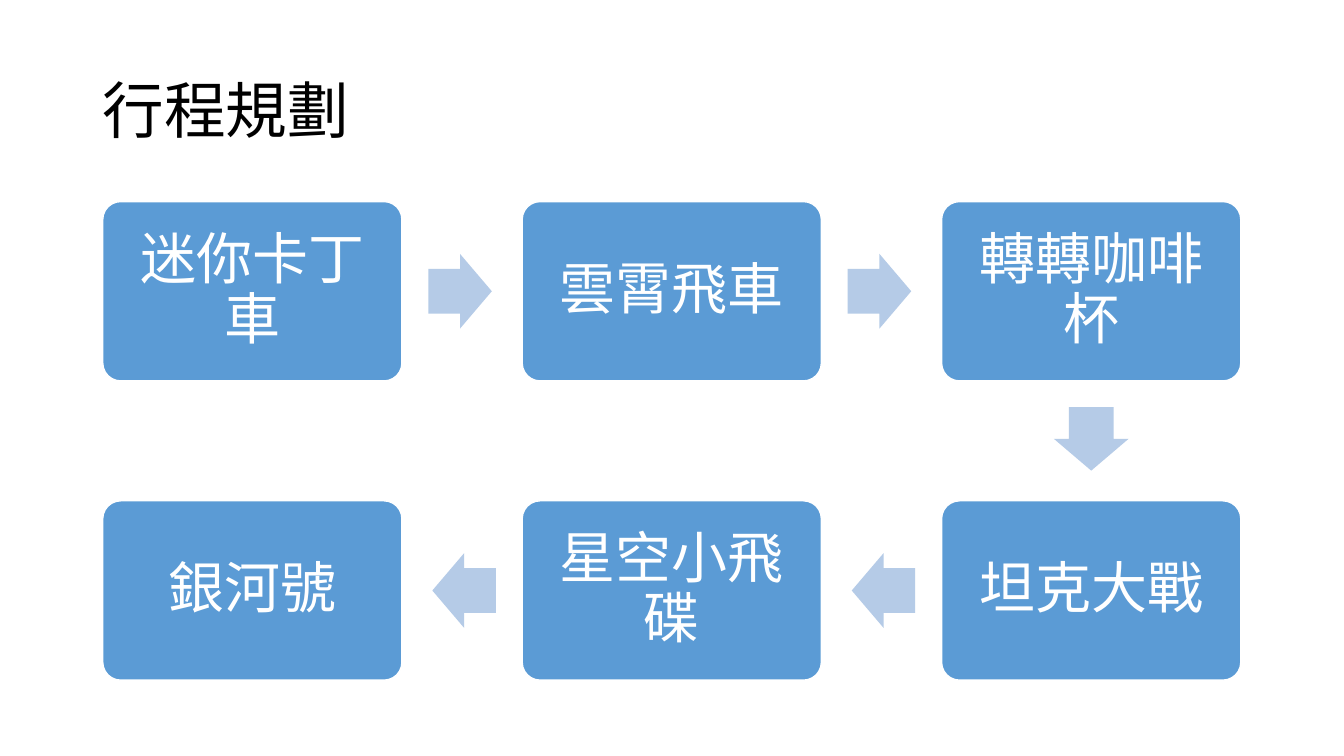
import math
from dataclasses import dataclass
from itertools import pairwise

import pptx
import pptx.dml.color
import pptx.enum.shapes
import pptx.enum.text
import pptx.util
from pptx.dml.color import RGBColor
from pptx.enum.shapes import MSO_SHAPE
from pptx.enum.text import MSO_ANCHOR, MSO_AUTO_SIZE, PP_ALIGN
from pptx.util import Cm

BLACK = RGBColor(0x00, 0x00, 0x00)
WHITE = RGBColor(0xFF, 0xFF, 0xFF)
BLUE = RGBColor(0x5B, 0x9B, 0xD5)
PALE_BLUE = RGBColor(0xB5, 0xCB, 0xE7)

# All lengths below are centimetres.
GRID_LEFT, GRID_TOP = 2.59, 5.08
COLUMN_STEP, ROW_STEP = 10.57, 7.54
CARD_WIDTH, CARD_HEIGHT = 7.54, 4.52
ARROW_LENGTH, ARROW_WIDTH = 1.6, 1.88
ARROW_SETBACK = 0.05

TITLE_FRAME = {
    "vertical_anchor": MSO_ANCHOR.MIDDLE,
    "auto_size": MSO_AUTO_SIZE.NONE,
    "word_wrap": True,
}
CARD_FRAME = TITLE_FRAME | dict.fromkeys(
    ("margin_left", "margin_top", "margin_right", "margin_bottom"), Cm(0.43)
)
TITLE_PARAGRAPH = {"alignment": PP_ALIGN.LEFT, "line_spacing": 0.9}
CARD_PARAGRAPH = {"alignment": PP_ALIGN.CENTER, "line_spacing": 0.9}
TITLE_FONT = {"name": "Calibri", "size": pptx.util.Pt(44)}
CARD_FONT = {"name": "Calibri", "size": pptx.util.Pt(40)}


@dataclass(frozen=True)
class Stop:
    name: str
    column: int
    row: int

    @property
    def left(self) -> float:
        return GRID_LEFT + self.column * COLUMN_STEP

    @property
    def top(self) -> float:
        return GRID_TOP + self.row * ROW_STEP

    @property
    def center(self) -> tuple[float, float]:
        return self.left + CARD_WIDTH / 2, self.top + CARD_HEIGHT / 2


ROUTE = (
    Stop("迷你卡丁車", 0, 0),
    Stop("雲霄飛車", 1, 0),
    Stop("轉轉咖啡杯", 2, 0),
    Stop("坦克大戰", 2, 1),
    Stop("星空小飛碟", 1, 1),
    Stop("銀河號", 0, 1),
)


def apply_format(target: object, values: dict) -> None:
    for name, value in values.items():
        setattr(target, name, value)


def write_text(box, text: str, color: RGBColor, frame_format: dict,
               paragraph_format: dict, font_format: dict) -> None:
    frame = box.text_frame
    apply_format(frame, frame_format)
    para = frame.paragraphs[0]
    apply_format(para, paragraph_format)
    span = para.add_run()
    span.text = text
    apply_format(span.font, font_format)
    span.font.color.rgb = color


def add_title(page, text: str) -> None:
    title = page.shapes.title
    apply_format(title, {"left": Cm(2.33), "top": Cm(1.01),
                         "width": Cm(29.21), "height": Cm(3.68)})
    write_text(title, text, BLACK, TITLE_FRAME, TITLE_PARAGRAPH, TITLE_FONT)


def add_card(page, stop: Stop) -> None:
    card = page.shapes.add_shape(
        MSO_SHAPE.ROUNDED_RECTANGLE, Cm(stop.left), Cm(stop.top),
        Cm(CARD_WIDTH), Cm(CARD_HEIGHT))
    card.adjustments[0] = 0.1
    card.shadow.inherit = False
    card.fill.solid()
    card.fill.fore_color.rgb = BLUE
    card.line.color.rgb = WHITE
    card.line.width = pptx.util.Pt(1)
    write_text(card, stop.name, WHITE, CARD_FRAME, CARD_PARAGRAPH, CARD_FONT)


def add_arrow(page, start: Stop, end: Stop) -> None:
    """Point from one card to the next, set slightly back from mid-gap."""
    (start_x, start_y), (end_x, end_y) = start.center, end.center
    angle = math.atan2(end_y - start_y, end_x - start_x)
    center_x = (start_x + end_x) / 2 - ARROW_SETBACK * math.cos(angle)
    center_y = (start_y + end_y) / 2 - ARROW_SETBACK * math.sin(angle)
    arrow = page.shapes.add_shape(
        MSO_SHAPE.RIGHT_ARROW,
        Cm(center_x - ARROW_LENGTH / 2), Cm(center_y - ARROW_WIDTH / 2),
        Cm(ARROW_LENGTH), Cm(ARROW_WIDTH))
    arrow.rotation = math.degrees(angle)
    arrow.adjustments[0] = 0.6
    arrow.adjustments[1] = 0.5
    arrow.shadow.inherit = False
    arrow.fill.solid()
    arrow.fill.fore_color.rgb = PALE_BLUE
    arrow.line.fill.background()


def main() -> None:
    deck = pptx.Presentation()
    deck.slide_width, deck.slide_height = Cm(33.87), Cm(19.05)
    page = deck.slides.add_slide(deck.slide_layouts.get_by_name("Title Only"))
    add_title(page, "行程規劃")
    for stop in ROUTE:
        add_card(page, stop)
    for start, end in pairwise(ROUTE):
        add_arrow(page, start, end)
    deck.save("out.pptx")


if __name__ == "__main__":
    main()
